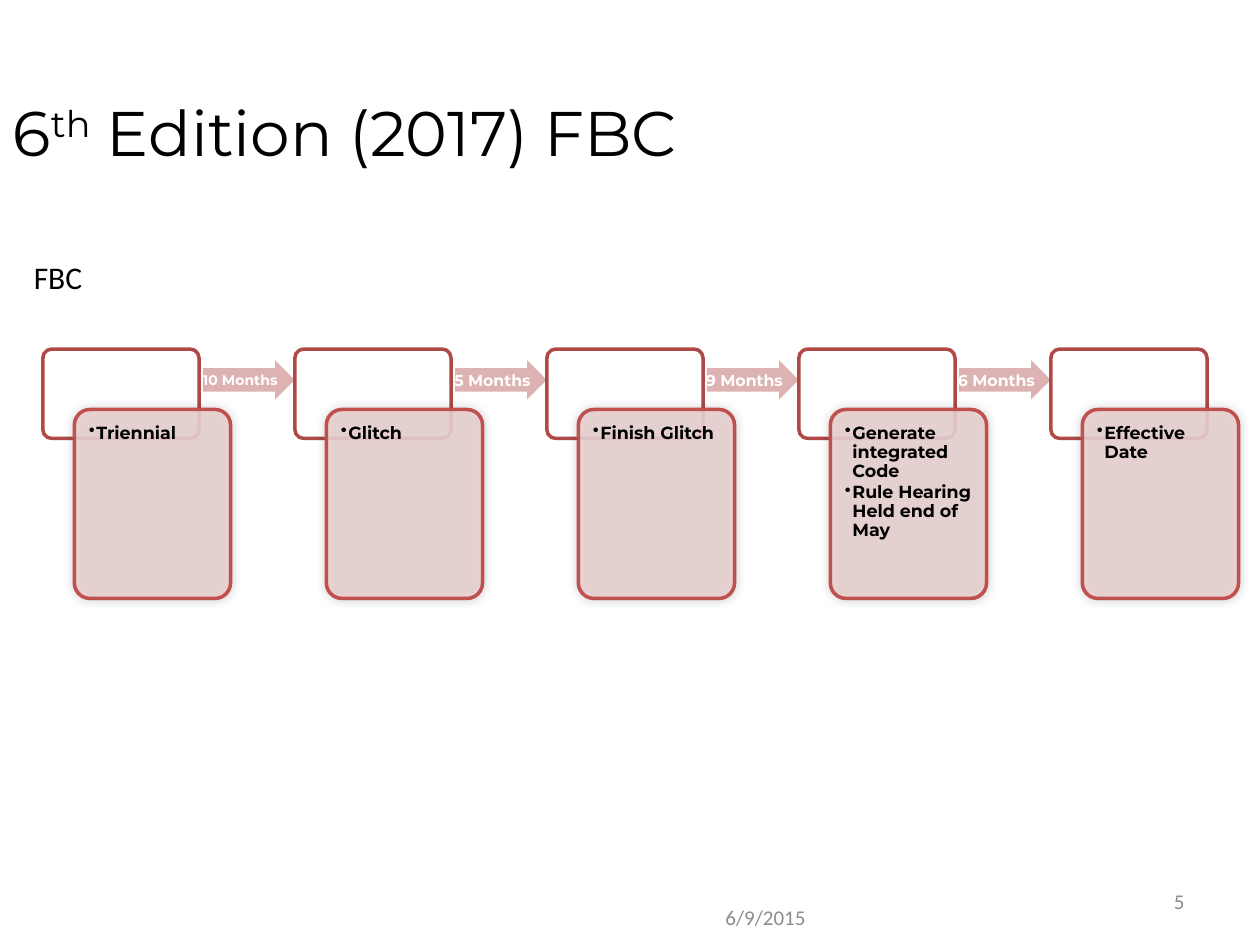
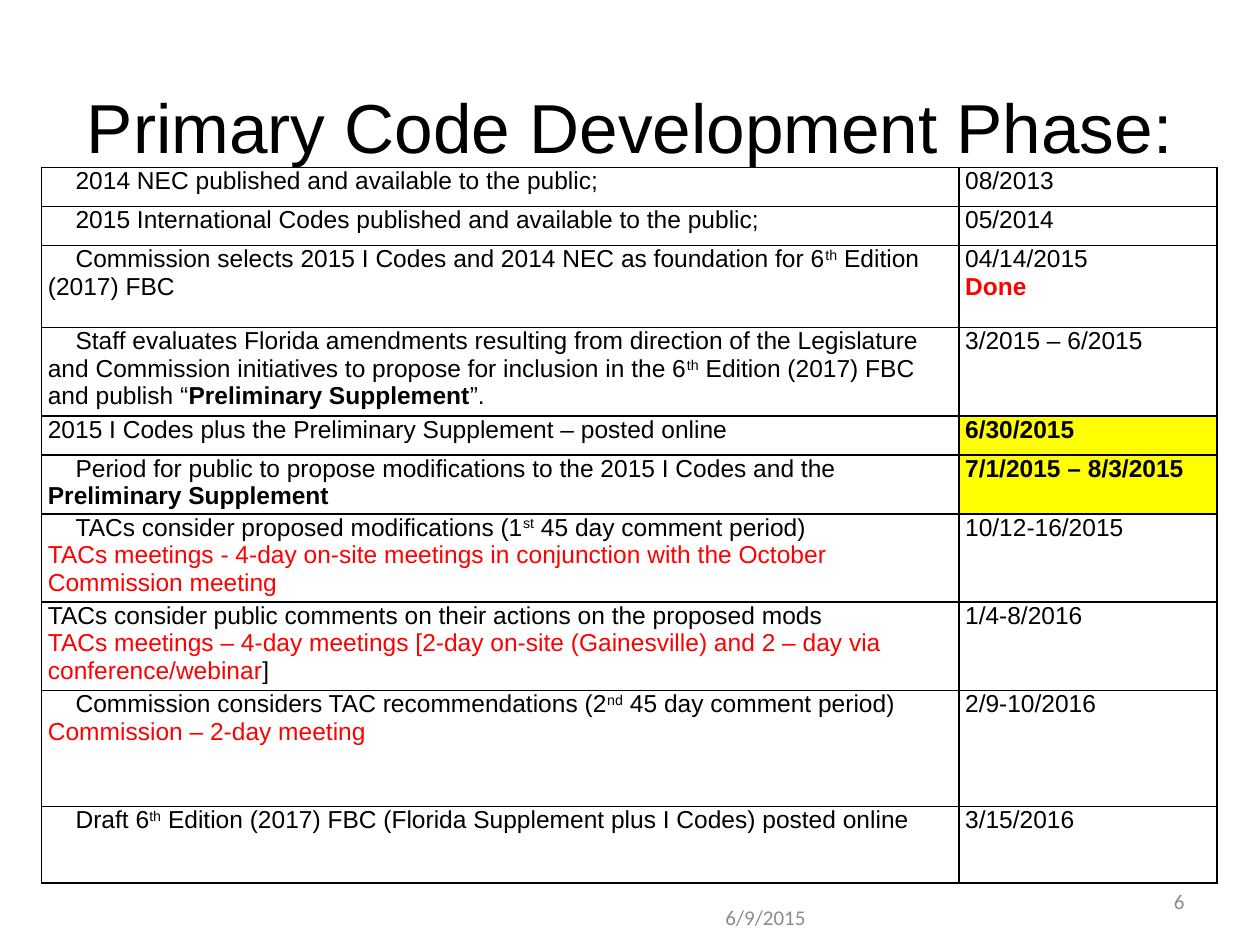
import pptx
import pptx.util
import pptx.dml.color
import pptx.enum.shapes
import pptx.enum.text
import pptx.oxml
import pptx.oxml.ns

Inches, Pt = pptx.util.Inches, pptx.util.Pt
RGBColor = pptx.dml.color.RGBColor
Shape = pptx.enum.shapes.MSO_SHAPE
Align = pptx.enum.text.PP_ALIGN
Anchor = pptx.enum.text.MSO_ANCHOR

BLACK = RGBColor(0x00, 0x00, 0x00)
WHITE = RGBColor(0xFF, 0xFF, 0xFF)
GREY = RGBColor(0x8C, 0x8C, 0x8C)
RED = RGBColor(0xFF, 0x00, 0x00)
YELLOW = RGBColor(0xFF, 0xFF, 0x00)
BRICK = RGBColor(0xAE, 0x49, 0x46)
CORAL = RGBColor(0xC0, 0x50, 0x4D)
BLUSH = RGBColor(0xE8, 0xD0, 0xD0)
ROSE = RGBColor(0xDC, 0xB3, 0xB2)

# Run formats; "up" marks superscript
UP = {"up": True}
BOLD = {"bold": True}
HOT = {"color": RED}
DONE = {"color": RED, "bold": True}

FOOT = {"name": "Calibri", "size": 12, "color": GREY}
LABEL = {"name": "Calibri", "size": 18, "color": BLACK}
HEAD = {"name": "Montserrat", "size": 36, "color": BLACK}
PHASE = {"name": "Arial", "size": 39.6, "color": BLACK}
STEP = {"name": "Montserrat", "size": 10, "color": BLACK, "bold": True}
SPAN = {"name": "Montserrat", "size": 9, "color": WHITE, "bold": True}
BODY = {"name": "Arial", "size": 14, "color": BLACK}

DATE = "6/9/2015"
SIZE = (10, 7.5)

# Steps: bullets, then time to the next step and its text size
STEPS = [
    (["Triennial"], "10 Months", 8),
    (["Glitch"], "5 Months", 9),
    (["Finish Glitch"], "9 Months", 9),
    (["Generate integrated Code", "Rule Hearing Held end of May"],
     "6 Months", 9),
    (["Effective Date"], None, None),
]
LEFT, PITCH = 0.34, 2.0
BACK = (0, 2.77, 1.24, 0.71)
CARD = (0.25, 3.25, 1.24, 1.5)
ARROW = (1.27, 2.86, 0.73, 0.31)

# Rows: height, first-line indent, paragraphs of runs, date, date fill
ROWS = [
    (0.31, True, [["2014 NEC published and available to the public;"]],
     [["08/2013"]], None),
    (0.31, True,
     [["2015 International Codes published and available to the public;"]],
     [["05/2014"]], None),
    (0.65, True,
     [["Commission selects 2015 I Codes and 2014 NEC as foundation for 6",
       ("th", UP), " Edition (2017) FBC"]],
     [["04/14/2015"], [("Done", DONE)]], None),
    (0.65, True,
     [["Staff evaluates Florida amendments resulting from direction of the "
       "Legislature and Commission initiatives to propose for inclusion in "
       "the 6", ("th", UP), " Edition (2017) FBC and publish “",
       ("Preliminary Supplement", BOLD), "”."]],
     [["3/2015 – 6/2015"]], None),
    (0.31, False,
     [["2015 I Codes plus the Preliminary Supplement – posted online"]],
     [[("6/30/2015", BOLD)]], YELLOW),
    (0.43, True,
     [["Period for public to propose modifications to the 2015 I Codes and "
       "the ", ("Preliminary Supplement", BOLD)]],
     [[("7/1/2015 – 8/3/2015", BOLD)]], YELLOW),
    (0.65, True,
     [["TACs consider proposed modifications (1", ("st", UP),
       " 45 day comment period)"],
      [("TACs meetings - 4-day on-site meetings in conjunction with the "
        "October Commission meeting", HOT)]],
     [["10/12-16/2015"]], None),
    (0.65, False,
     [["TACs consider public comments on their actions on the proposed mods"],
      [("TACs meetings – 4-day meetings [2-day on-site (Gainesville) and "
        "2 – day via conference/webinar", HOT), "]"]],
     [["1/4-8/2016"]], None),
    (0.92, True,
     [["Commission considers TAC recommendations (2", ("nd", UP),
       " 45 day comment period)"],
      [("Commission – 2-day meeting", HOT)]],
     [["2/9-10/2016"]], None),
    (0.61, True,
     [["Draft 6", ("th", UP), " Edition (2017) FBC (Florida Supplement plus "
       "I Codes) posted online"]],
     [["3/15/2016"]], None),
]
COLS = (7.28, 2.05)


def add_xml(parent, text):
    """Append an element written with the a: prefix."""
    space = pptx.oxml.ns.nsdecls("a")
    node = pptx.oxml.parse_xml(text.replace(">", f" {space}>", 1)
                               if "/>" not in text.split(">")[0] + ">"
                               else text.replace("/>", f" {space}/>", 1))
    parent.append(node)


def style(run, looks):
    for key, value in looks.items():
        if key == "color":
            run.font.color.rgb = value
        elif key == "up":
            run._r.get_or_add_rPr().set("baseline", "30000")
        else:
            setattr(run.font, key, Pt(value) if key == "size" else value)


def write(frame, paras, looks, align=Align.LEFT, inset=None,
          anchor=Anchor.TOP, wrap=True):
    """Fill a frame; a run is a string or a (string, format) pair."""
    frame.word_wrap = wrap
    frame.vertical_anchor = anchor
    if inset is not None:
        for side, gap in zip(("left", "top", "right", "bottom"), inset):
            setattr(frame, f"margin_{side}", Inches(gap))
    for i, runs in enumerate(paras):
        para = frame.paragraphs[0] if i == 0 else frame.add_paragraph()
        para.alignment = align
        for part in runs:
            text, extra = (part, {}) if isinstance(part, str) else part
            run = para.add_run()
            run.text = text
            style(run, {**looks, **extra})


def place(box):
    return [Inches(n) for n in box]


def label(slide, box, text, looks, **how):
    frame = slide.shapes.add_textbox(*place(box)).text_frame
    write(frame, [[text]], looks, **how)


def start(deck, number, box, runs, looks, align):
    """Add a slide with its title, date and number."""
    slide = deck.slides.add_slide(deck.slide_layouts[5])
    title = slide.shapes.title
    for side, value in zip(("left", "top", "width", "height"), place(box)):
        setattr(title, side, value)
    write(title.text_frame, [runs], looks, align, anchor=Anchor.MIDDLE)
    label(slide, (5.66, 7.08, 4.14, 0.4), DATE, FOOT, anchor=Anchor.MIDDLE)
    label(slide, (7.17, 6.95, 2.33, 0.4), str(number), FOOT,
          align=Align.RIGHT, anchor=Anchor.MIDDLE)
    return slide


def draw(slide, kind, box, shift, fill, line, bends):
    left, *rest = box
    shape = slide.shapes.add_shape(kind, *place((left + shift, *rest)))
    shape.shadow.inherit = False
    shape.fill.solid()
    shape.fill.fore_color.rgb = fill
    if line is None:
        shape.line.fill.background()
    else:
        shape.line.color.rgb = line
        shape.line.width = Pt(2)
    for i, bend in enumerate(bends):
        shape.adjustments[i] = bend
    return shape


def soften(card):
    """Make the card slightly clear, with a faint glow of shadow."""
    props = card._element.spPr
    tint = props.find(pptx.oxml.ns.qn("a:solidFill"))[0]
    add_xml(tint, '<a:alpha val="90000"/>')
    glow = props.find(pptx.oxml.ns.qn("a:effectLst"))
    add_xml(glow, '<a:outerShdw blurRad="76200" dist="0" dir="13500000">'
                  '<a:srgbClr val="000000"><a:alpha val="20000"/>'
                  '</a:srgbClr></a:outerShdw>')


def add_step(slide, shift, bullets, wait, size):
    draw(slide, Shape.ROUNDED_RECTANGLE, BACK, shift, WHITE, BRICK, [0.1])
    card = draw(slide, Shape.ROUNDED_RECTANGLE, CARD, shift, BLUSH, CORAL,
                [0.1])
    soften(card)
    write(card.text_frame, [[text] for text in bullets], STEP,
          inset=[0.08] * 4)
    for para in card.text_frame.paragraphs:
        para.line_spacing = 0.9
        para.space_after = Pt(1.5)
        props = para._p.get_or_add_pPr()
        props.set("marL", str(Inches(0.06)))
        props.set("indent", str(-Inches(0.06)))
        add_xml(props, '<a:buChar char="•"/>')
    if wait:
        arrow = draw(slide, Shape.RIGHT_ARROW, ARROW, shift, ROSE, None,
                     [0.6, 0.5])
        write(arrow.text_frame, [[wait]], {**SPAN, "size": size},
              Align.CENTER, (0, 0, 0.04, 0), Anchor.MIDDLE, False)


def add_plan(slide):
    high = sum(row[0] for row in ROWS)
    box = place((0.33, 1.33, sum(COLS), high))
    table = slide.shapes.add_table(len(ROWS), len(COLS), *box).table
    table.first_row = table.horz_banding = False
    for col, wide in zip(table.columns, COLS):
        col.width = Inches(wide)
    for i, (tall, indent, task, date, fill) in enumerate(ROWS):
        table.rows[i].height = Inches(tall)
        for j, (paras, tint) in enumerate(((task, None), (date, fill))):
            cell = table.cell(i, j)
            write(cell.text_frame, paras, BODY)
            for side, gap in zip(("left", "top", "right", "bottom"),
                                 (0.05, 0, 0.05, 0)):
                setattr(cell, f"margin_{side}", Inches(gap))
            props = cell._tc.get_or_add_tcPr()
            for edge in "LRTB":
                add_xml(props, f'<a:ln{edge} w="12700"><a:solidFill>'
                               f'<a:srgbClr val="{BLACK}"/></a:solidFill>'
                               f'</a:ln{edge}>')
            if tint is None:
                cell.fill.background()
            else:
                cell.fill.solid()
                cell.fill.fore_color.rgb = tint
        if indent:
            first = table.cell(i, 0).text_frame.paragraphs[0]
            first._p.get_or_add_pPr().set("indent", str(Inches(0.22)))


def main():
    deck = pptx.Presentation()
    deck.slide_width, deck.slide_height = place(SIZE)

    flow = start(deck, 5, (0, 0.69, 8.92, 0.71),
                 ["6", ("th", UP), " Edition (2017) FBC"], HEAD, Align.LEFT)
    for i, step in enumerate(STEPS):
        add_step(flow, LEFT + i * PITCH, *step)
    label(flow, (0.17, 2, 3.5, 0.34), "FBC", LABEL)

    plan = start(deck, 6, (0.5, 0.63, 9, 0.74),
                 ["Primary Code Development Phase:"], PHASE, Align.CENTER)
    add_plan(plan)
    deck.save("out.pptx")


if __name__ == "__main__":
    main()
